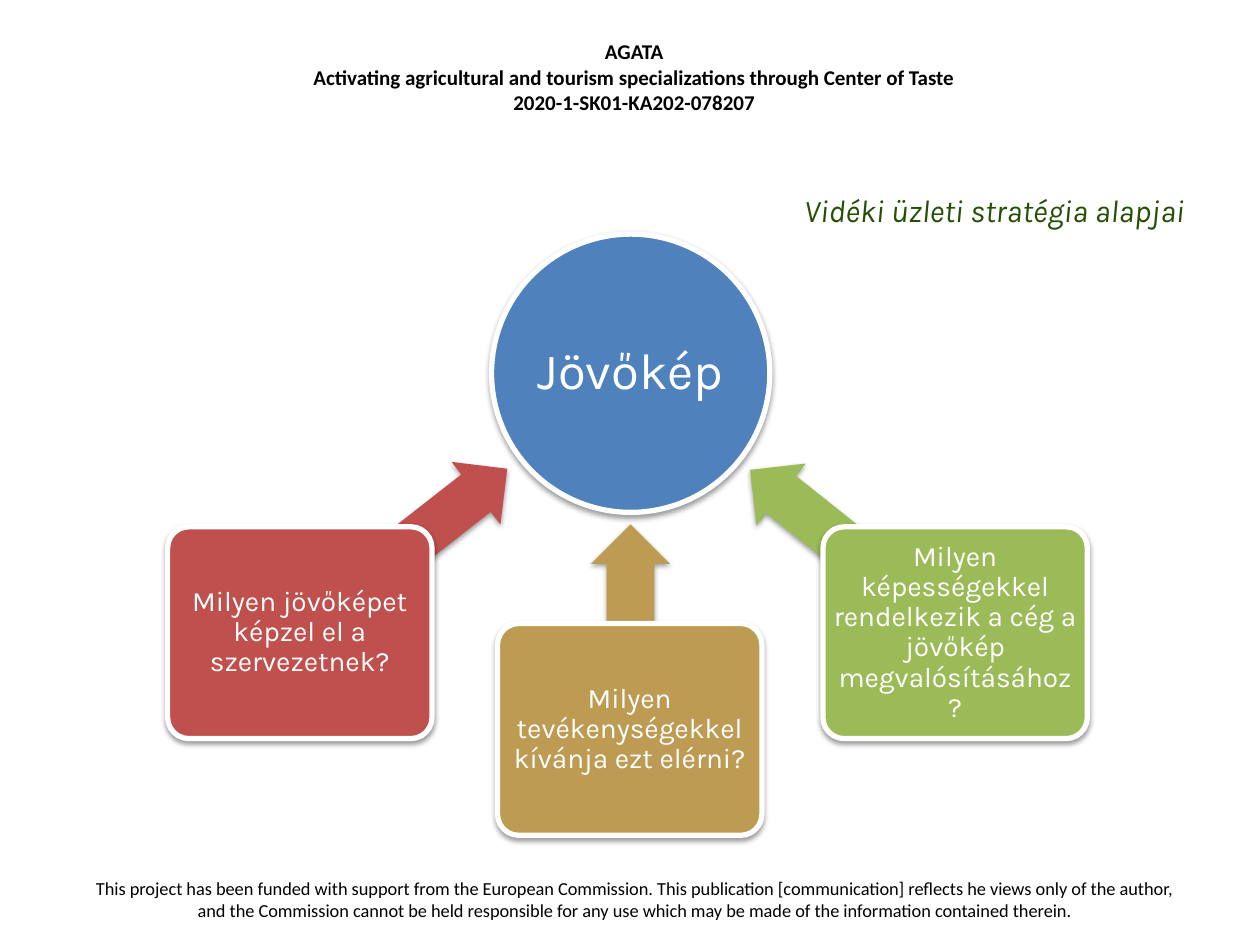
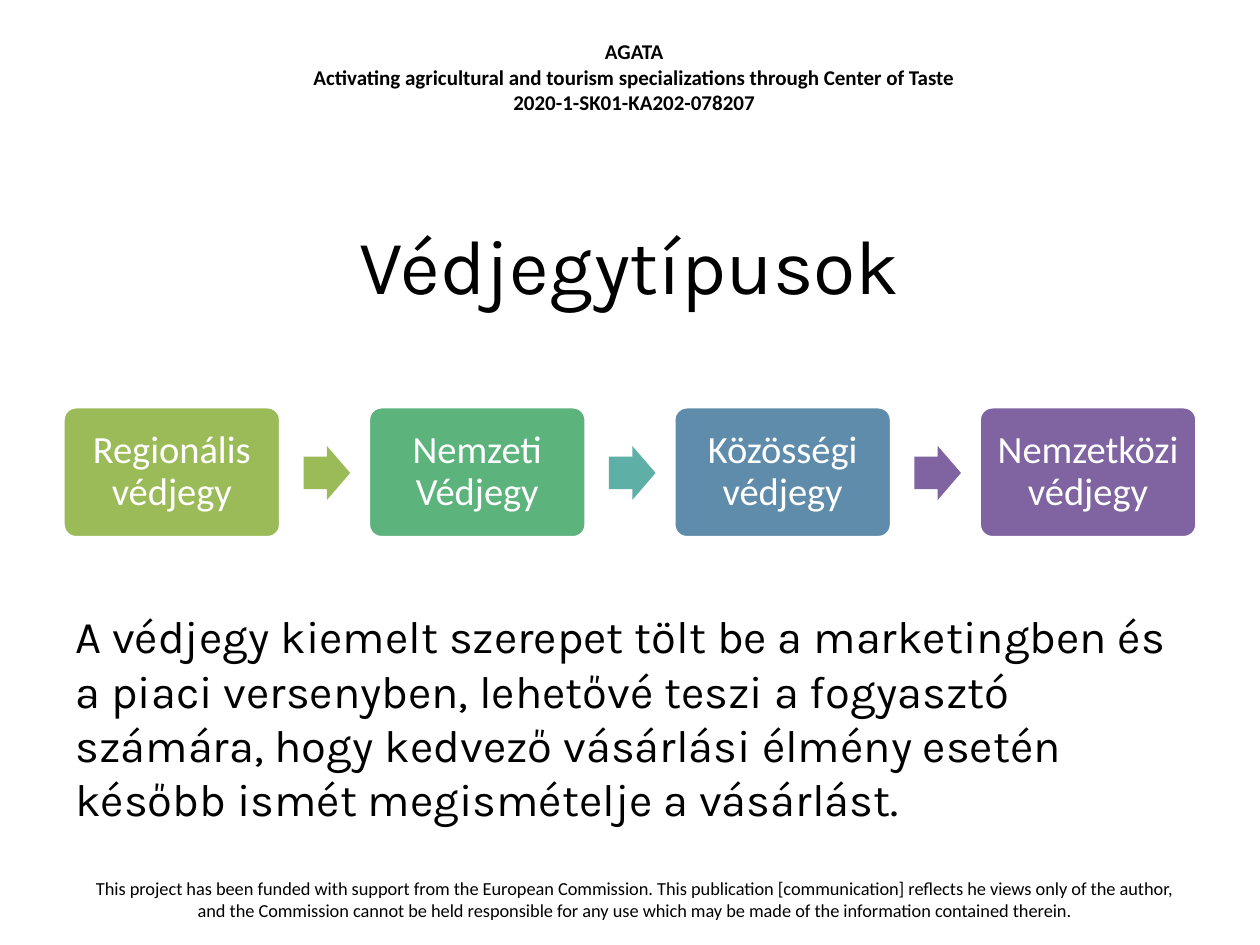
from lxml import etree
from pptx import Presentation
from pptx.dml.color import RGBColor
from pptx.enum.shapes import MSO_SHAPE as SHAPE
from pptx.enum.text import MSO_ANCHOR as ANCHOR, PP_ALIGN as ALIGN
from pptx.oxml.ns import qn
from pptx.util import Cm, Pt

BLACK = RGBColor(0x00, 0x00, 0x00)
WHITE = RGBColor(0xFF, 0xFF, 0xFF)
DARK_GREEN = RGBColor(0x26, 0x4F, 0x05)
BLUE = RGBColor(0x4F, 0x81, 0xBD)
RED = RGBColor(0xC0, 0x50, 0x4D)
OCHRE = RGBColor(0xBD, 0x9B, 0x53)
LIME = RGBColor(0x9B, 0xBB, 0x59)
GREEN = RGBColor(0x5C, 0xB3, 0x7C)
TEAL = RGBColor(0x5E, 0xAF, 0xA6)
STEEL = RGBColor(0x60, 0x8C, 0xAB)
PURPLE = RGBColor(0x80, 0x64, 0xA2)

KARLA = "Karla"
CALIBRI = "Calibri"
MARGIN = 1.27
CONTENT_W = 22.86

HEADER = [
    "AGATA",
    "Activating agricultural and tourism specializations through Center of Taste",
    "2020-1-SK01-KA202-078207",
]
FOOTER = (
    "This project has been funded with support from the European Commission. "
    "This publication [communication] reflects he views only of the author, "
    "and the Commission cannot be held responsible for any use which may be made "
    "of the information contained therein."
)


class Deck:
    """Holds the presentation style and the slide being built."""

    def __init__(self):
        self.prs = Presentation()
        self.prs.slide_width, self.prs.slide_height = Cm(25.4), Cm(19.05)
        self.slide = None

    def new_slide(self):
        self.slide = self.prs.slides.add_slide(self.prs.slide_layouts[6])
        self.text(5.28, 0.66, 15.01, 1.8, HEADER, 12, font=CALIBRI, bold=True)
        self.text(1.37, 17.55, CONTENT_W, 1.19, [FOOTER], 10.5, font=CALIBRI)

    def fill_text(self, tf, lines, size, font, color, align=ALIGN.CENTER,
                  spacing=1.0, bold=False, italic=False):
        tf.word_wrap = True
        for i, line in enumerate(lines):
            p = tf.paragraphs[0] if i == 0 else tf.add_paragraph()
            p.alignment = align
            p.line_spacing = spacing
            r = p.add_run()
            r.text = line
            r.font.name, r.font.size = font, Pt(size)
            r.font.bold, r.font.italic = bold, italic
            r.font.color.rgb = color

    def text(self, x, y, w, h, lines, size, font=KARLA, color=BLACK,
             anchor=ANCHOR.TOP, **style):
        tf = self.slide.shapes.add_textbox(Cm(x), Cm(y), Cm(w), Cm(h)).text_frame
        tf.vertical_anchor = anchor
        self.fill_text(tf, lines, size, font, color, **style)

    def title(self, text, h, size, **style):
        self.text(MARGIN, 3.73, CONTENT_W, h, [text], size,
                  anchor=ANCHOR.MIDDLE, **style)

    def shape(self, kind, x, y, w, h, fill, line=0, adj=(), shadow=False):
        s = self.slide.shapes.add_shape(kind, Cm(x), Cm(y), Cm(w), Cm(h))
        s.shadow.inherit = False
        for i, value in enumerate(adj):
            s.adjustments[i] = value
        s.fill.solid()
        s.fill.fore_color.rgb = fill
        if line:
            s.line.color.rgb = WHITE
            s.line.width = Pt(line)
        else:
            s.line.fill.background()
        if shadow:
            self.cast_shadow(s)
        return s

    def cast_shadow(self, s):
        effects = s.element.spPr.find(qn("a:effectLst"))
        outer = etree.SubElement(
            effects, qn("a:outerShdw"), blurRad=str(Pt(3.1)), dist=str(Pt(1.6)),
            dir="5400000", rotWithShape="0")
        color = etree.SubElement(outer, qn("a:srgbClr"), val=str(BLACK))
        etree.SubElement(color, qn("a:alpha"), val="38000")

    def arrow(self, kind, x, y, w, h, fill, rotation=0, shadow=False):
        s = self.shape(kind, x, y, w, h, fill, adj=(0.6, 0.5), shadow=shadow)
        s.rotation = rotation

    def label(self, s, text, size, font, inset):
        tf = s.text_frame
        tf.margin_left = tf.margin_right = Cm(inset)
        tf.margin_top = tf.margin_bottom = Cm(inset)
        tf.vertical_anchor = ANCHOR.MIDDLE
        self.fill_text(tf, [text], size, font, WHITE, spacing=0.9)

    def box(self, x, y, w, h, fill, text, size, font=KARLA, inset=0.08,
            line=3, shadow=False):
        s = self.shape(SHAPE.ROUNDED_RECTANGLE, x, y, w, h, fill, line,
                       (0.1,), shadow)
        self.label(s, text, size, font, inset)


def build_vision(deck):
    deck.new_slide()
    circle = deck.shape(SHAPE.OVAL, 9.91, 4.72, 5.61, 5.61, BLUE, 3, shadow=True)
    deck.label(circle, "Jövőkép", 29, KARLA, 0.05)
    questions = [
        ("Milyen jövőképet képzel el a szervezetnek?",
         RED, 3.38, 10.62, (5.46, 10.29, 5.33), 142),
        ("Milyen tevékenységekkel kívánja ezt elérni?",
         OCHRE, 10.03, 12.57, (10.64, 11.84, 4.14), 90),
        ("Milyen képességekkel rendelkezik a cég a jövőkép megvalósításához?",
         LIME, 16.59, 10.62, (14.55, 10.31, 5.26), 38.5),
    ]
    for text, color, x, y, arrow, rotation in questions:
        deck.arrow(SHAPE.LEFT_ARROW, *arrow, 1.6, color, rotation, shadow=True)
        deck.box(x, y, 5.33, 4.27, color, text, 16, shadow=True)
    deck.title("Vidéki üzleti stratégia alapjai", 0.99, 18, color=DARK_GREEN,
               align=ALIGN.RIGHT, italic=True)


def build_trademarks(deck):
    deck.new_slide()
    deck.title("Védjegytípusok", 3.18, 44)
    steps = [
        ("Regionális védjegy", LIME),
        ("Nemzeti Védjegy", GREEN),
        ("Közösségi védjegy", STEEL),
        ("Nemzetközi védjegy", PURPLE),
    ]
    arrow_colors = [LIME, TEAL, PURPLE]
    step_w = 4.39
    pitch = (CONTENT_W - step_w) / (len(steps) - 1)
    for i, (text, color) in enumerate(steps):
        deck.box(MARGIN + i * pitch, 8.2, step_w, 2.64, color, text, 22,
                 CALIBRI, 0.23, line=2)
    for i, color in enumerate(arrow_colors):
        deck.arrow(SHAPE.RIGHT_ARROW, MARGIN + i * pitch + 4.85, 8.99,
                   0.94, 1.09, color)
    deck.text(MARGIN, 12.14, CONTENT_W, 4.88, [
        "A védjegy kiemelt szerepet tölt be a marketingben és a piaci versenyben, "
        "lehetővé teszi a fogyasztó számára, hogy kedvező vásárlási élmény esetén "
        "később ismét megismételje a vásárlást."
    ], 25.9, align=ALIGN.LEFT)


def main():
    deck = Deck()
    build_vision(deck)
    build_trademarks(deck)
    deck.prs.save("out.pptx")


if __name__ == "__main__":
    main()
